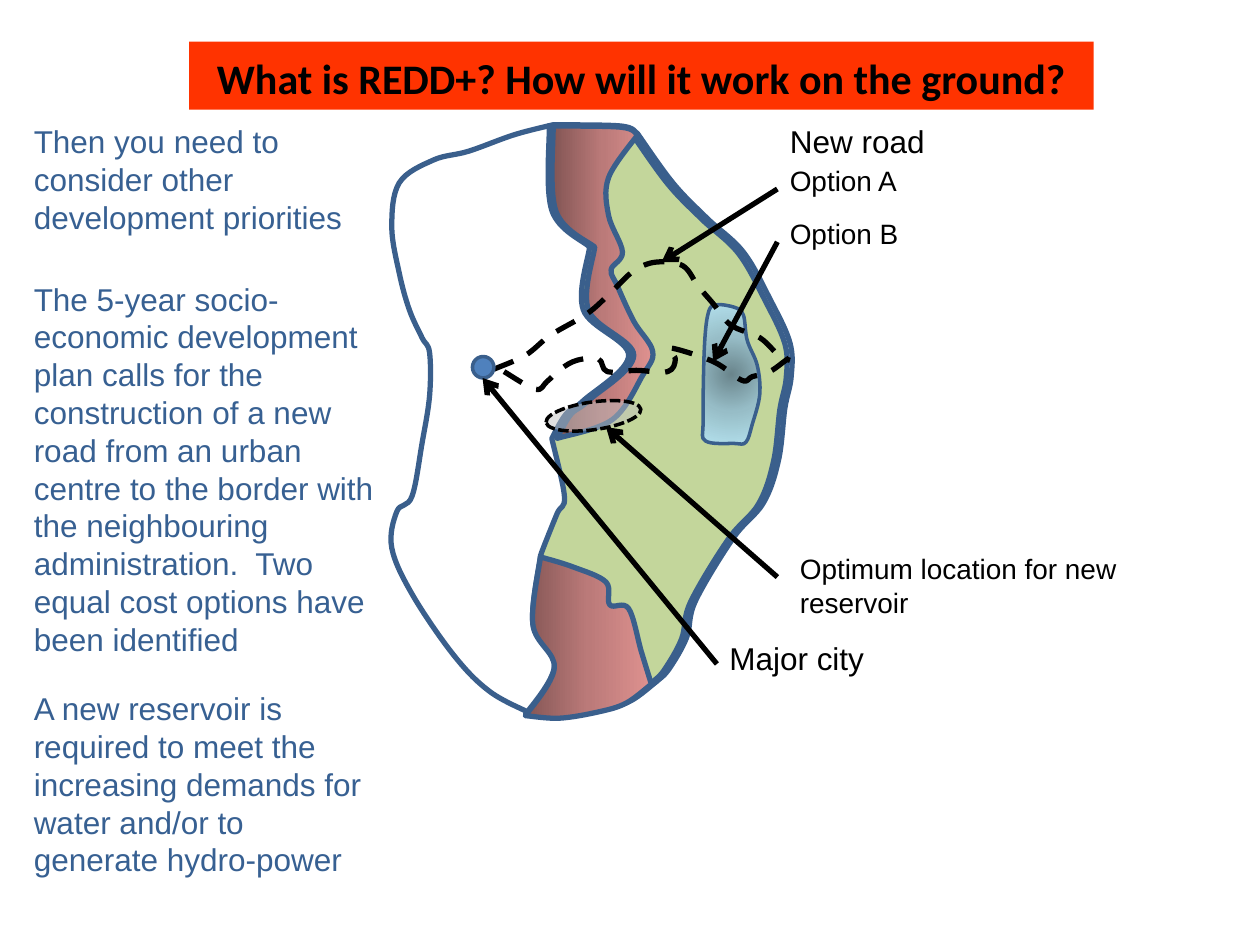
from lxml import etree
from pptx import Presentation
from pptx import util as u
from pptx.dml.color import RGBColor
from pptx.enum import dml, shapes, text
from pptx.oxml import ns, parse_xml

INK = {"black": "000000", "navy": "3A5F8C", "blue": "4F81BD", "note": "376092",
       "red": "FF3300", "green": "C3D69B", "grey": "BFBFBF"}
CLAY = ("845655", "BB7A79", "DE918F")
WATER = ("6A858C", "97BDC7", "B3E0EC")
LINEAR = '<a:lin ang="0" scaled="0"/>'
RADIAL = ('<a:path path="circle"><a:fillToRect l="50000" t="50000" '
          'r="50000" b="50000"/></a:path>')

COAST = {
    "north": [(4.39, 0.99), (4.93, 1), (5.06, 1.06)],
    "east": [(5.06, 1.06), (5.34, 1.45), (5.61, 1.73), (5.9, 2), (6.11, 2.37), (6.27, 2.72),
             (6.28, 2.99), (6.23, 3.24), (6.18, 3.65), (6.06, 3.99), (5.82, 4.27),
             (5.52, 4.77), (5.45, 5.06), (5.31, 5.31), (5.21, 5.41)],
    "south": [(5.21, 5.41), (5.01, 5.56), (4.79, 5.63), (4.48, 5.68), (4.21, 5.66)],
    "west": [(4.21, 5.66), (3.89, 5.49), (3.61, 5.21), (3.28, 4.73), (3.11, 4.35),
             (3.15, 4.06), (3.27, 3.94), (3.35, 3.52), (3.41, 3.14), (3.41, 2.8),
             (3.35, 2.68), (3.25, 2.46), (3.17, 2.17), (3.11, 1.8), (3.17, 1.45),
             (3.44, 1.27), (3.72, 1.2), (4.08, 1.07), (4.39, 0.99)],
}
FOREST = {
    "valley": [(4.17, 5.68), (4.4, 5.29), (4.23, 4.95), (4.29, 4.41)],
    "inlet": [(4.29, 4.4), (4.42, 4.08), (4.48, 3.94), (4.38, 3.48)],
    "ridge": [(4.38, 3.48), (4.49, 3.29), (4.63, 3.18), (4.99, 2.82), (4.63, 2.46),
              (4.68, 1.96)],
    "gap": [(4.68, 1.96), (4.38, 1.67), (4.36, 1)],
}
UPPER_EDGE = [(5.06, 1.07), (4.83, 1.41), (4.83, 1.71), (4.94, 2), (4.85, 2.14), (4.9, 2.27),
              (5.03, 2.55), (5.18, 2.79), (5.1, 2.98), (4.86, 3.33), (4.42, 3.48)]
LOWER_EDGE = [(4.29, 4.42), (4.55, 4.5), (4.81, 4.62), (4.84, 4.8), (4.99, 4.83),
              (5.09, 5.17), (5.17, 5.43)]
LAKE = [(5.62, 2.49), (5.59, 2.77), (5.58, 3.34), (5.6, 3.5), (5.83, 3.52), (5.92, 3.51),
        (5.97, 3.37), (6.03, 3.13), (6.01, 2.9), (5.93, 2.7), (5.9, 2.5), (5.83, 2.44),
        (5.68, 2.42), (5.62, 2.49)]
ROADS = {
    "A": [(3.92, 2.93), (4.17, 2.82), (4.37, 2.66), (4.66, 2.49), (4.85, 2.32), (5.03, 2.15),
          (5.21, 2.08), (5.42, 2.11), (5.54, 2.27), (5.66, 2.41), (5.8, 2.58), (6.03, 2.68),
          (6.18, 2.82), (6.27, 2.86)],
    "B": [(4, 2.95), (4.25, 3.09), (4.34, 3.03), (4.45, 2.93), (4.58, 2.86), (4.75, 2.85),
          (4.82, 2.95), (5.05, 2.94), (5.3, 2.95), (5.36, 2.85), (5.31, 2.76), (5.66, 2.87),
          (5.89, 3.02), (5.97, 2.99), (6.11, 2.95), (6.27, 2.84), (6.31, 2.87)],
}
LABELS = [
    ("New road", 6.17, 0.92, 1.75, 0.4, 18, "black"),
    ("Option A", 6.17, 1.25, 1.58, 0.37, 16, "black"),
    ("Option B", 6.17, 1.67, 1.58, 0.37, 16, "black"),
    ("Major city", 5.69, 5.02, 1.75, 0.4, 18, "black"),
    ("Optimum location for new reservoir", 6.25, 4.33, 3.5, 0.37, 16, "black"),
    ("Then you need to consider other development priorities",
     0.17, 0.92, 3, 1.01, 18, "note"),
    ("The 5-year socio-economic development plan calls for the construction of a new road "
     "from an urban centre to the border with the neighbouring administration.  Two equal "
     "cost options have been identified", 0.17, 2.17, 3, 2.83, 18, "note"),
    ("A new reservoir is required to meet the increasing demands for water and/or to "
     "generate hydro-power", 0.17, 5.42, 2.83, 1.62, 18, "note"),
]
ARROWS = {"option A": (6.17, 1.5, 5.25, 2.08), "option B": (6.17, 1.92, 5.66, 2.87),
          "city": (5.69, 5.27, 3.83, 3), "reservoir": (6.17, 4.58, 4.81, 3.39)}


def hue(name):
    return RGBColor.from_string(INK[name])


def pen(shape, name, width, dash=None):
    shape.line.color.rgb = hue(name)
    shape.line.width = u.Pt(width)
    if dash:
        shape.line.dash_style = dash


def paint(shape, name):
    shape.fill.solid()
    shape.fill.fore_color.rgb = hue(name)
    shape.shadow.inherit = False


def blend(shape, tones, kind):
    stops = "".join(f'<a:gs pos="{i * 50000}"><a:srgbClr val="{tone}"/></a:gs>'
                    for i, tone in enumerate(tones))
    grad = parse_xml(f'<a:gradFill {ns.nsdecls("a")} rotWithShape="1">'
                     f'<a:gsLst>{stops}</a:gsLst>{kind}</a:gradFill>')
    paint(shape, "grey")
    props = shape._element.spPr
    props.replace(props.find(ns.qn("a:solidFill")), grad)


def shift(points, dx, dy):
    return [(x + dx, y + dy) for x, y in points]


def lean(start, end, before, after):
    return tuple(p + (b - a) / 6 for p, a, b in zip(start, before, after)), end


def smooth(points):
    loop = points[0] == points[-1]
    first, last = (points[-2], points[1]) if loop else (points[0], points[-1])
    chain = [first, *points, last]
    for a, b, c, d in zip(chain, chain[1:], chain[2:], chain[3:]):
        leave = tuple(q + (r - p) / 6 for p, q, r in zip(a, b, c))
        reach = tuple(r - (s - q) / 6 for q, r, s in zip(b, c, d))
        yield leave, reach, c


def curve(slide, *parts, closed=True):
    bends = [bend for part in parts for bend in smooth(part)]
    maker = slide.shapes.build_freeform(*map(u.Inches, parts[0][0]))
    maker.add_line_segments([tuple(map(u.Inches, bend[2])) for bend in bends], close=closed)
    shape = maker.convert_to_shape()
    edges = list(shape._element.iter(ns.qn("a:lnTo")))
    for edge, bend in zip(edges, bends):
        edge.tag = ns.qn("a:cubicBezTo")
        for i, (x, y) in enumerate(bend[:2]):
            edge.insert(i, etree.Element(ns.qn("a:pt"), x=str(u.Inches(x) - shape.left),
                                         y=str(u.Inches(y) - shape.top)))
    shape.fill.background()
    shape.shadow.inherit = False
    pen(shape, "navy", 3)
    return shape


def oval(slide, name, *box):
    shape = slide.shapes.add_shape(shapes.MSO_SHAPE.OVAL, *map(u.Inches, box))
    paint(shape, name)
    return shape


def label(slide, words, x, y, w, h, size, color):
    frame = slide.shapes.add_textbox(*map(u.Inches, (x, y, w, h))).text_frame
    frame.word_wrap = True
    para = frame.paragraphs[0]
    para.text = words
    para.font.name, para.font.size = "Arial", u.Pt(size)
    para.font.color.rgb = hue(color)


def arrow(slide, *ends):
    line = slide.shapes.add_connector(shapes.MSO_CONNECTOR.STRAIGHT, *map(u.Inches, ends))
    pen(line, "black", 3)
    etree.SubElement(line.line._get_or_add_ln(), ns.qn("a:tailEnd"), type="arrow")
    etree.SubElement(line._element.spPr, ns.qn("a:effectLst"))


def draw_land(slide):
    curve(slide, *COAST.values())
    inner = [shift(COAST[side], -0.04, 0.01) for side in ("north", "east", "south")]
    paint(curve(slide, *inner, *FOREST.values()), "green")
    lower = curve(slide, shift(COAST["south"], -0.04, 0.02),
                  shift(FOREST["valley"], 0, 0.01), LOWER_EDGE)
    upper = curve(slide, shift(COAST["north"], 0, 0.01), UPPER_EDGE,
                  shift(FOREST["ridge"], 0.04, 0), shift(FOREST["gap"], 0.03, 0))
    for strip in (lower, upper):
        blend(strip, CLAY, LINEAR)


def draw_sites(slide):
    lake = curve(slide, LAKE)
    blend(lake, WATER, RADIAL)
    pen(lake, "navy", 2)
    for road in ROADS.values():
        pen(curve(slide, road, closed=False), "black", 3, dml.MSO_LINE.DASH)
    pen(oval(slide, "blue", 3.75, 2.83, 0.17, 0.17), "navy", 2)
    basin = oval(slide, "grey", 4.33, 3.19, 0.76, 0.22)
    basin.rotation = -8
    tone = basin._element.spPr.find(ns.qn("a:solidFill"))[0]
    etree.SubElement(tone, ns.qn("a:alpha"), val="49000")
    pen(basin, "black", 2, dml.MSO_LINE.SQUARE_DOT)


def draw_title(slide):
    bar = slide.shapes.add_shape(shapes.MSO_SHAPE.RECTANGLE,
                                 *map(u.Inches, (1.5, 0.33, 7.18, 0.54)))
    paint(bar, "red")
    bar.line.fill.background()
    bar.text_frame.vertical_anchor = text.MSO_ANCHOR.BOTTOM
    para = bar.text_frame.paragraphs[0]
    para.text = "What is REDD+? How will it work on the ground?"
    para.alignment = text.PP_ALIGN.CENTER
    para.font.name, para.font.size, para.font.bold = "Calibri", u.Pt(24), True
    para.font.color.rgb = hue("black")


def main():
    deck = Presentation()
    deck.slide_width, deck.slide_height = u.Inches(10), u.Inches(7.5)
    slide = deck.slides.add_slide(deck.slide_layouts[6])
    draw_land(slide)
    draw_sites(slide)
    for ends in ARROWS.values():
        arrow(slide, *ends)
    for item in LABELS:
        label(slide, *item)
    draw_title(slide)
    deck.save("out.pptx")


if __name__ == "__main__":
    main()
